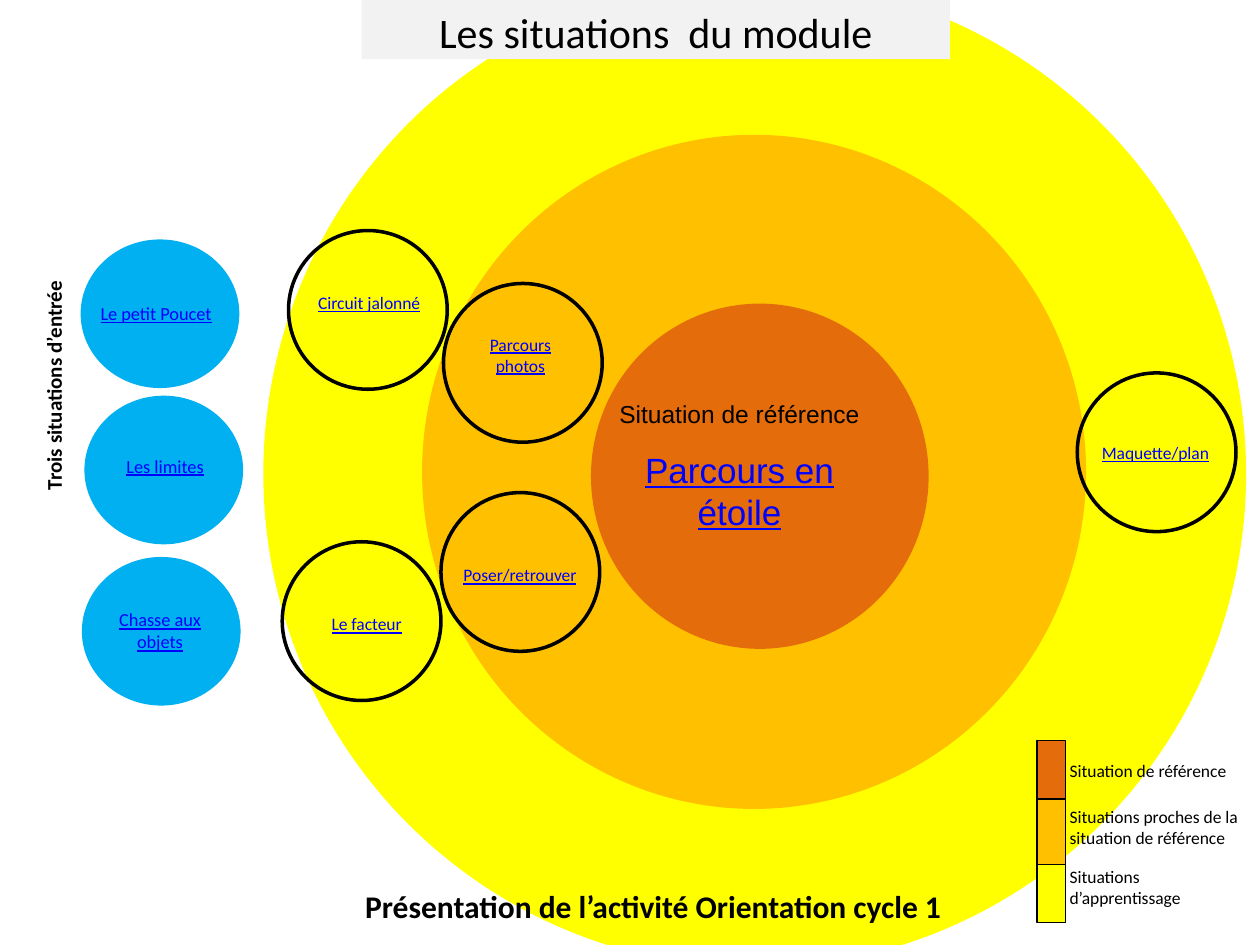
from typing import NamedTuple

from pptx import Presentation
from pptx.dml.color import RGBColor
from pptx.enum.shapes import MSO_SHAPE
from pptx.enum.text import MSO_ANCHOR, PP_ALIGN
from pptx.util import Inches, Pt

OVAL, RECTANGLE = MSO_SHAPE.OVAL, MSO_SHAPE.RECTANGLE
LEFT, CENTER = PP_ALIGN.LEFT, PP_ALIGN.CENTER
TOP, MIDDLE = MSO_ANCHOR.TOP, MSO_ANCHOR.MIDDLE

BLACK = RGBColor(0x00, 0x00, 0x00)
YELLOW = RGBColor(0xFF, 0xFF, 0x00)
AMBER = RGBColor(0xFF, 0xC0, 0x00)
ORANGE = RGBColor(0xE4, 0x6C, 0x0A)
SKY = RGBColor(0x00, 0xB0, 0xF0)
PALE_GREY = RGBColor(0xF2, 0xF2, 0xF2)
LINK_BLUE = RGBColor(0x00, 0x00, 0xFF)


class Area(NamedTuple):
    left: float
    top: float
    width: float
    height: float


class Line(NamedTuple):
    text: str
    format: dict
    before: float = 0


class Bubble(NamedTuple):
    left: float
    top: float
    label: str
    label_area: Area
    align: PP_ALIGN = CENTER
    anchor: MSO_ANCHOR = TOP


def font_format(size: float, color: RGBColor = BLACK, name: str = "Calibri", **extra) -> dict:
    return {"size": Pt(size), "name": name, "color": color, **extra}


ENTRY_FORMAT = font_format(10.5, LINK_BLUE, underline=True)
LEARNING_FORMAT = font_format(10, LINK_BLUE, underline=True)
LEGEND_FORMAT = font_format(10)

RINGS = [
    (Area(2.09, -0.16, 7.8, 7.84), YELLOW),
    (Area(3.35, 1.07, 5.27, 5.35), AMBER),
    (Area(4.69, 2.41, 2.68, 2.74), ORANGE),
]
SWATCHES = [(ORANGE, 0.46), (AMBER, 0.52), (YELLOW, 0.46)]
ENTRY_BUBBLES = [
    Bubble(0.67, 3.14, "Les limites", Area(0.8, 3.56, 1.02, 0.29)),
    Bubble(0.64, 1.9, "Le petit Poucet", Area(0.7, 2.34, 1.14, 0.29), LEFT, MIDDLE),
    Bubble(0.65, 4.42, "Chasse aux objets", Area(0.7, 4.78, 1.14, 0.45)),
]
LEARNING_BUBBLES = [
    Bubble(3.52, 2.25, "Parcours photos", Area(3.58, 2.6, 1.1, 0.44)),
    Bubble(2.29, 1.83, "Circuit jalonné", Area(2.38, 2.27, 1.1, 0.27)),
    Bubble(3.5, 3.91, "Poser/retrouver", Area(3.58, 4.43, 1.18, 0.27), LEFT),
    Bubble(8.55, 2.96, "Maquette/plan", Area(8.62, 3.46, 1.1, 0.27)),
    Bubble(2.24, 4.3, "Le facteur", Area(2.32, 4.82, 1.18, 0.27)),
]


def add_figure(page, kind, area: Area, fill=None, line_width: float = 0):
    """Add a preset shape; no fill or a zero line width leaves that part out."""
    shape = page.shapes.add_shape(kind, *map(Inches, area))
    shape.shadow.inherit = False
    if fill is None:
        shape.fill.background()
    else:
        shape.fill.solid()
        shape.fill.fore_color.rgb = fill
    if line_width:
        shape.line.color.rgb = BLACK
        shape.line.width = Pt(line_width)
    else:
        shape.line.fill.background()
    return shape


def write(shape, lines: list[Line], align=LEFT, anchor=TOP) -> None:
    frame = shape.text_frame
    frame.word_wrap = True
    frame.vertical_anchor = anchor
    for index, line in enumerate(lines):
        para = frame.add_paragraph() if index else frame.paragraphs[0]
        para.alignment = align
        para.space_before = Pt(line.before)
        span = para.add_run()
        span.text = line.text
        for key, value in line.format.items():
            if key == "color":
                span.font.color.rgb = value
            else:
                setattr(span.font, key, value)


def add_text(page, area: Area, lines: list[Line], align=LEFT, anchor=TOP):
    box = page.shapes.add_textbox(*map(Inches, area))
    write(box, lines, align, anchor)
    return box


def add_bubble(page, bubble: Bubble, height: float, style: dict, fill=None, line_width: float = 0) -> None:
    add_figure(page, OVAL, Area(bubble.left, bubble.top, 1.26, height), fill, line_width)
    add_text(page, bubble.label_area, [Line(bubble.label, style)], bubble.align, bubble.anchor)


def add_legend(page) -> None:
    legend = add_text(page, Area(8.39, 5.88, 1.61, 1.46), [
        Line("Situation de référence", LEGEND_FORMAT),
        Line("Situations proches de la situation de référence", LEGEND_FORMAT, 14.5),
        Line("Situations d’apprentissage", LEGEND_FORMAT, 10),
    ])
    legend.text_frame.margin_top = Inches(0.15)
    top = 5.88
    for color, height in SWATCHES:
        add_figure(page, RECTANGLE, Area(8.23, top, 0.23, height), color, 0.75)
        top += height


def main() -> None:
    deck = Presentation()
    deck.slide_width, deck.slide_height = Inches(10), Inches(7.5)
    page = deck.slides.add_slide(deck.slide_layouts[6])

    for area, color in RINGS:
        add_figure(page, OVAL, area, color)
    add_text(page, Area(4.69, 3.12, 2.36, 1.18), [
        Line("Situation de référence", font_format(14, name="Arial")),
        Line("Parcours en étoile", font_format(20, LINK_BLUE, "Arial", underline=True), 11),
    ], CENTER)
    add_legend(page)

    title = add_figure(page, RECTANGLE, Area(2.87, 0, 4.67, 0.47), PALE_GREY)
    write(title, [Line("Les situations  du module", font_format(24))], CENTER)
    add_text(page, Area(2.8, 6.99, 5, 0.4),
             [Line("Présentation de l’activité Orientation cycle 1", font_format(18, bold=True))])
    side_title = add_text(page, Area(-0.62, 2.91, 2.09, 0.3),
                          [Line("Trois situations d’entrée", font_format(12, bold=True))], CENTER)
    side_title.rotation = 270

    for bubble in ENTRY_BUBBLES:
        add_bubble(page, bubble, 1.18, ENTRY_FORMAT, fill=SKY)
    for bubble in LEARNING_BUBBLES:
        add_bubble(page, bubble, 1.26, LEARNING_FORMAT, line_width=2)

    deck.save("out.pptx")


if __name__ == "__main__":
    main()
